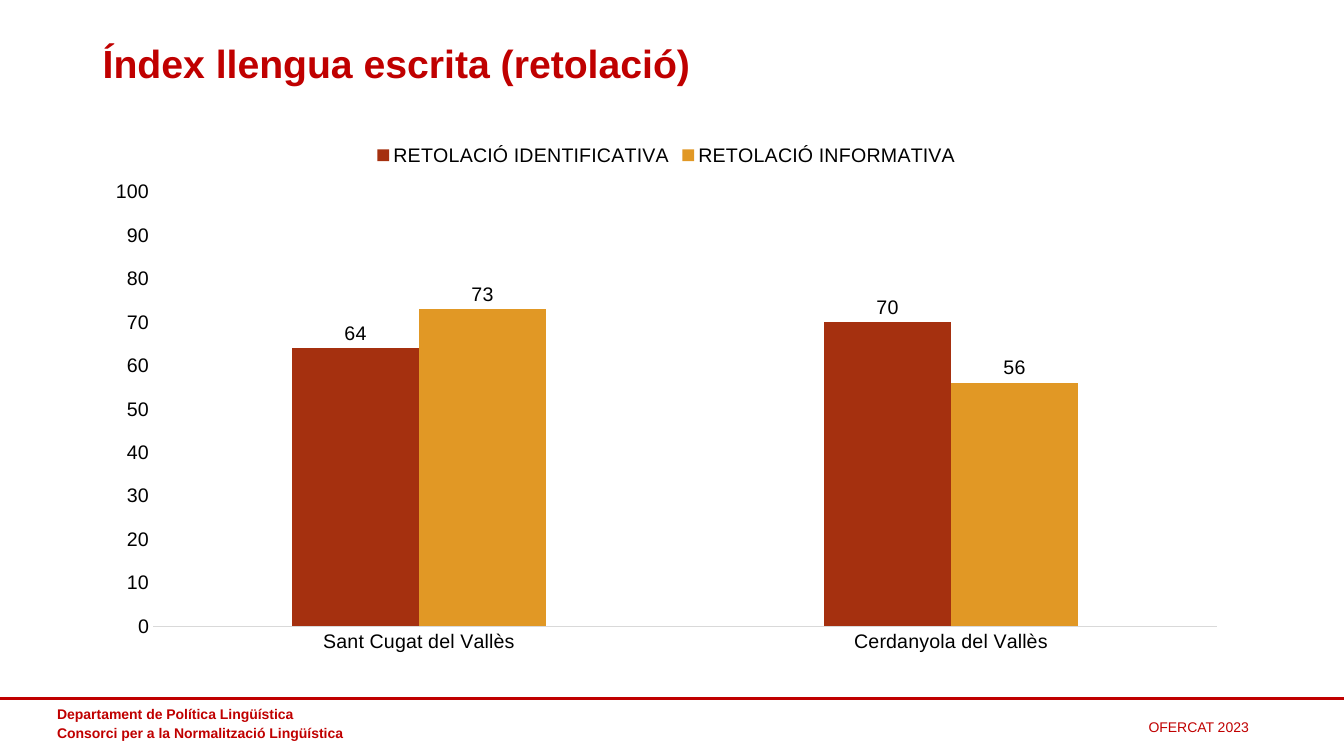
from lxml import etree
from pptx import Presentation
from pptx import util as u
from pptx.chart import data
from pptx.dml import color
from pptx.enum import chart as ch, shapes, text
from pptx.oxml import ns

RED = "C00000"
SERIES = [
    ("RETOLACIÓ IDENTIFICATIVA", (64, 70), "A5300F"),
    ("RETOLACIÓ INFORMATIVA", (73, 56), "E19825"),
]


def rgb(code):
    return color.RGBColor.from_string(code)


def apply(target, values):
    for name, value in values.items():
        setattr(target, name, value)


def style(font, size, code, bold=False):
    apply(font, {"name": "Arial", "size": u.Pt(size), "bold": bold})
    font.color.rgb = rgb(code)


def paint(fill, code):
    fill.solid()
    fill.fore_color.rgb = rgb(code)


def add_text(slide, place, lines, size, bold, space, align, anchor):
    box = slide.shapes.add_textbox(*map(u.Cm, place))
    frame = box.text_frame
    apply(frame, {"word_wrap": True, "vertical_anchor": anchor})
    frame.text = "\n".join(lines)
    for para in frame.paragraphs:
        apply(para, {"alignment": align, "line_spacing": space})
        for run in para.runs:
            style(run.font, size, RED, bold)


def add_rule(slide, top, width):
    rule = slide.shapes.add_connector(
        shapes.MSO_CONNECTOR.STRAIGHT, 0, u.Cm(top), width, u.Cm(top))
    rule.line.color.rgb = rgb(RED)
    rule.line.width = u.Pt(1.5)
    etree.SubElement(rule._element.spPr, ns.qn("a:effectLst"))


def add_bars(slide, place):
    source = data.CategoryChartData(number_format="0")
    source.categories = ["Sant Cugat del Vallès", "Cerdanyola del Vallès"]
    for name, values, _ in SERIES:
        source.add_series(name, values)
    chart = slide.shapes.add_chart(
        ch.XL_CHART_TYPE.COLUMN_CLUSTERED, *map(u.Cm, place), source).chart
    style(chart.font, 14, "000000")
    apply(chart, {"has_title": False, "has_legend": True})
    apply(chart.legend, {"position": ch.XL_LEGEND_POSITION.TOP,
                         "include_in_layout": False})
    style(chart.legend.font, 14, "000000")
    plot = chart.plots[0]
    apply(plot, {"gap_width": 219, "overlap": 0, "vary_by_categories": False})
    for series, (_, _, code) in zip(plot.series, SERIES):
        paint(series.format.fill, code)
        labels = series.data_labels
        apply(labels, {"show_value": True, "number_format": "0",
                       "number_format_is_linked": False,
                       "position": ch.XL_LABEL_POSITION.OUTSIDE_END})
        style(labels.font, 14, "000000")
    for axis in (chart.category_axis, chart.value_axis):
        apply(axis, {"has_major_gridlines": False,
                     "major_tick_mark": ch.XL_TICK_MARK.NONE,
                     "minor_tick_mark": ch.XL_TICK_MARK.NONE})
        style(axis.tick_labels.font, 14, "000000")
    base = chart.category_axis.format.line
    base.color.rgb = rgb("D9D9D9")
    base.width = u.Pt(0.75)
    scale = chart.value_axis
    apply(scale, {"minimum_scale": 0, "maximum_scale": 100, "major_unit": 10})
    apply(scale.tick_labels, {"number_format": "0",
                              "number_format_is_linked": False})
    scale.format.line.fill.background()


def main():
    deck = Presentation()
    apply(deck, {"slide_width": u.Cm(33.87), "slide_height": u.Cm(19.05)})
    slide = deck.slides.add_slide(deck.slide_layouts[6])
    paint(slide.background.fill, "FFFFFF")
    left, right = text.PP_ALIGN.LEFT, text.PP_ALIGN.RIGHT
    top, middle = text.MSO_ANCHOR.TOP, text.MSO_ANCHOR.MIDDLE
    add_rule(slide, 17.6, deck.slide_width)
    add_text(slide, (14.78, 17.93, 16.94, 0.71), ["OFERCAT 2023"],
             10, False, 1.14, right, top)
    add_text(slide, (1.19, 17.6, 8.36, 1.22),
             ["Departament de Política Lingüística",
              "Consorci per a la Normalització Lingüística"],
             10, True, 1.14, left, top)
    add_text(slide, (2.34, 0.46, 29.21, 2.41),
             ["Índex llengua escrita (retolació)"],
             28, True, 0.9, left, middle)
    add_bars(slide, (2.34, 3.35, 28.91, 13.36))
    deck.save("out.pptx")


if __name__ == "__main__":
    main()
